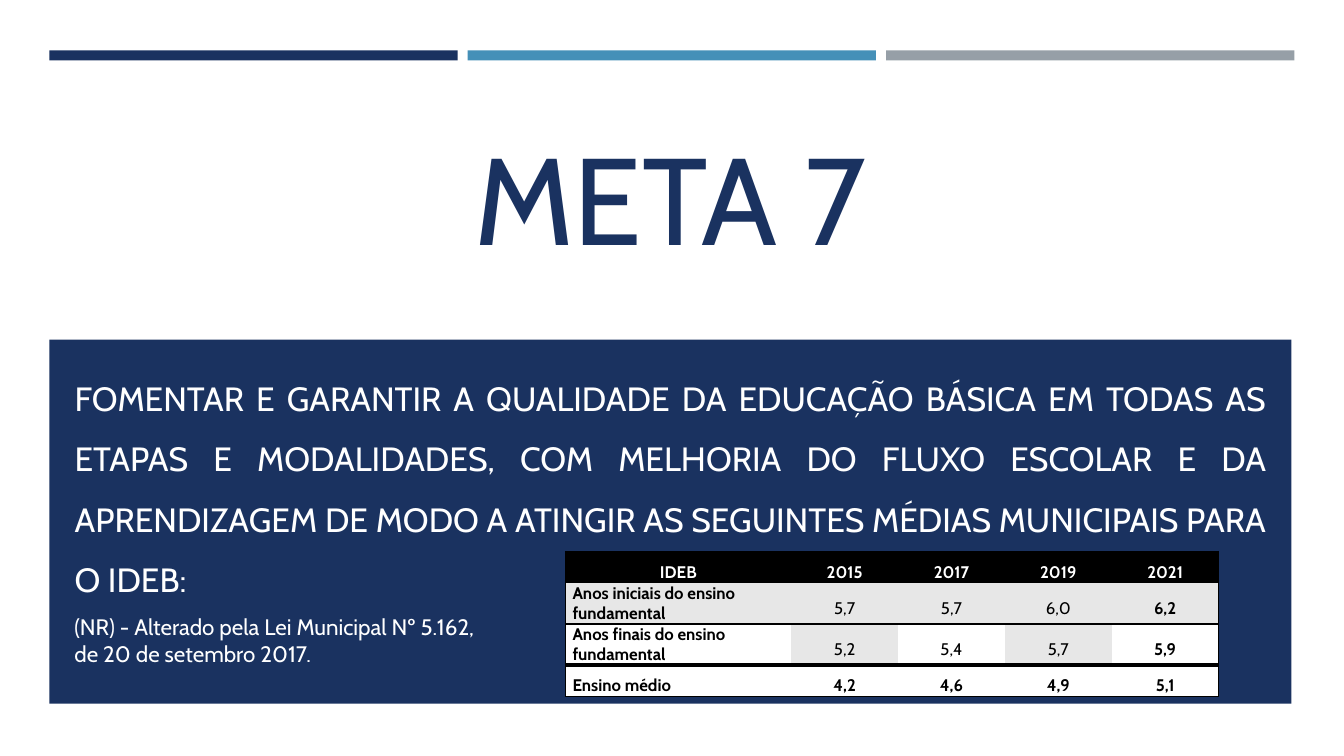
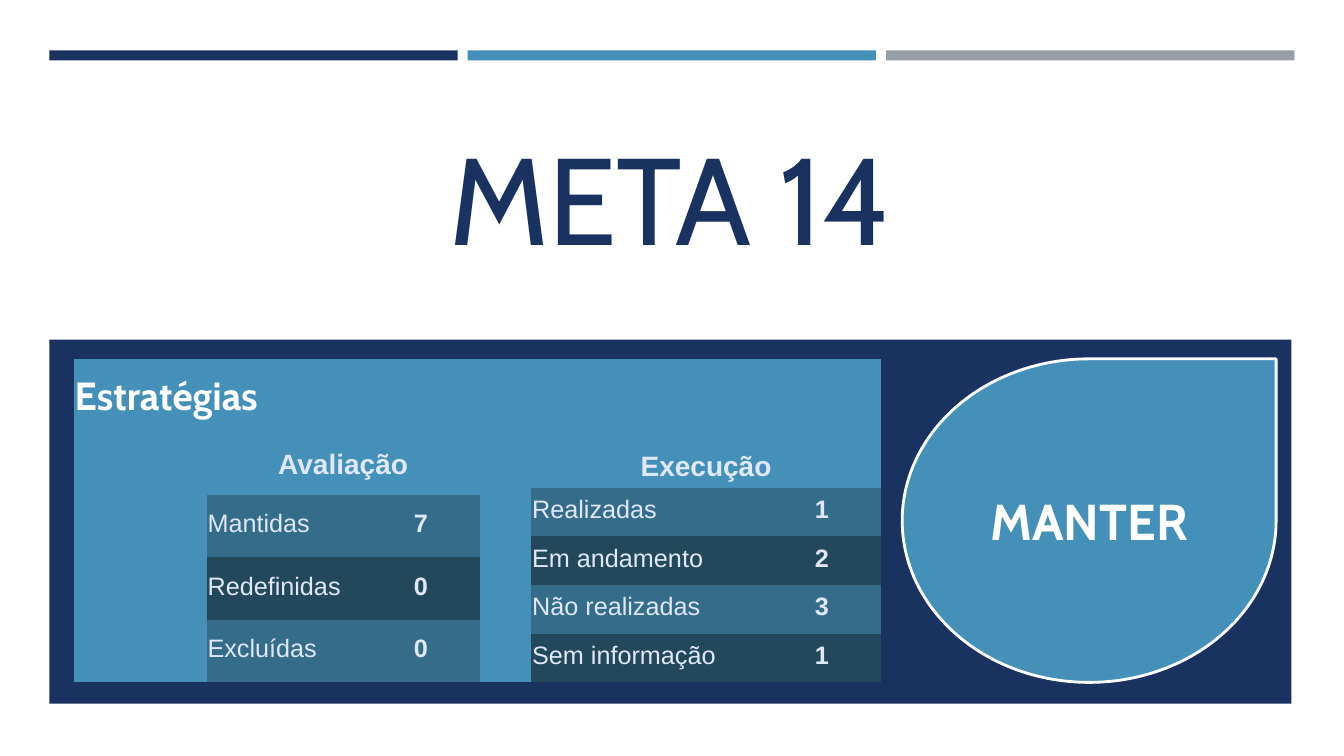
from lxml.etree import SubElement
from pptx import Presentation
from pptx.dml.color import RGBColor
from pptx.enum.shapes import MSO_SHAPE as Shape
from pptx.enum.text import MSO_ANCHOR as Anchor, MSO_AUTO_SIZE as AutoSize, PP_ALIGN as Align
from pptx.oxml.ns import qn
from pptx.util import Inches, Pt

NAVY = RGBColor(0x1A, 0x32, 0x60)
BLUE = RGBColor(0x45, 0x90, 0xB8)
GRAY = RGBColor(0x96, 0x9F, 0xA7)
STEEL = RGBColor(0x34, 0x6C, 0x8A)
TEAL = RGBColor(0x23, 0x48, 0x5C)
ICE = RGBColor(0xE0, 0xE8, 0xF7)
SILVER = RGBColor(0xE7, 0xE7, 0xE7)
WHITE = RGBColor(0xFF, 0xFF, 0xFF)
BLACK = RGBColor(0, 0, 0)

CELL = Inches(0.1)
COLUMNS, ROWS = 133.33, 75
MARGIN, TEXT_LEFT, TEXT_WIDTH = 4.9, 6.4, 120.2
PANEL_TOP, PANEL_WIDTH, PANEL_HEIGHT = 33.7, 123.2, 36.1
BAND_WIDTH, BAND_GAP = 40.5, 1
SCORE_LEFT, SCORE_TOP = 7.3, 35.6
NO_STYLE = "{2D5ABB26-0587-4C30-8999-92F81FD0307C}"
FORECAST = [
    ("IDEB", "2015", "2017", "2019", "2021"),
    ("Anos iniciais do ensino fundamental", "5,7", "5,7", "6,0", "6,2"),
    ("Anos finais do ensino fundamental", "5,2", "5,4", "5,7", "5,9"),
    ("Ensino médio", "4,2", "4,6", "4,9", "5,1"),
]


def grid(*cells):
    return [int(CELL * cell) for cell in cells]


def place(shape, *cells):
    shape.left, shape.top, shape.width, shape.height = grid(*cells)


def write_text(frame, text, size, color=WHITE, font="Cabin", bold=False,
               align=Align.LEFT, spacing=None, after=None):
    para = frame.paragraphs[0]
    para.text = text
    para.alignment = align
    if spacing is not None:
        para.line_spacing = spacing
    if after is not None:
        para.space_after = Pt(after)
    for span in para.runs:
        span.font.name = font
        span.font.size = Pt(size)
        span.font.bold = bold
        span.font.color.rgb = color


def add_block(page, kind, cells, fill, line=None):
    block = page.shapes.add_shape(kind, *grid(*cells))
    block.shadow.inherit = False
    block.fill.solid()
    block.fill.fore_color.rgb = fill
    if line is None:
        block.line.fill.background()
    else:
        block.line.color.rgb = line
        block.line.width = Pt(2)
    return block


def set_up_layout(layout, page):
    title, subtitle = list(layout.placeholders)[:2]
    place(title, TEXT_LEFT, 11.2, TEXT_WIDTH, 16.1)
    place(subtitle, TEXT_LEFT, 34.6, TEXT_WIDTH, 25.7)
    blocks = [((MARGIN + i * (BAND_WIDTH + BAND_GAP), 5, BAND_WIDTH, 1), color)
              for i, color in enumerate((NAVY, BLUE, GRAY))]
    blocks.append(((MARGIN, PANEL_TOP, PANEL_WIDTH, PANEL_HEIGHT), NAVY))
    for i, (cells, color) in enumerate(blocks):
        element = add_block(page, Shape.RECTANGLE, cells, color).element
        element.xpath(".//p:cNvPr")[0].set("id", str(20 + i))
        layout.shapes.element.insert(2 + i, element)


def write_title(page, text):
    frame = page.shapes.title.text_frame
    frame.auto_size = AutoSize.NONE
    frame.vertical_anchor = Anchor.BOTTOM
    write_text(frame, text, 88, color=NAVY, align=Align.CENTER)


def write_goal(page, text):
    frame = page.placeholders[1].text_frame
    frame.auto_size = AutoSize.NONE
    frame.vertical_anchor = Anchor.MIDDLE
    write_text(frame, text, 24, align=Align.JUSTIFY, spacing=1.5, after=6)


def add_note(page, text):
    box = page.shapes.add_textbox(*grid(TEXT_LEFT, 60.3, 48, 9.1))
    box.text_frame.word_wrap = True
    write_text(box.text_frame, text, 16)


def add_grid_table(page, left, top, widths, heights):
    holder = page.shapes.add_table(len(heights), len(widths),
                                   *grid(left, top, sum(widths), sum(heights)))
    next(holder.element.iter(qn("a:tableStyleId"))).text = NO_STYLE
    table = holder.table
    for column, width in zip(table.columns, grid(*widths)):
        column.width = width
    for row, height in zip(table.rows, grid(*heights)):
        row.height = height
    return holder


def paint_cell(cell, fill, insets, anchor=Anchor.MIDDLE):
    cell.fill.solid()
    cell.fill.fore_color.rgb = fill
    cell.margin_left, cell.margin_top, cell.margin_right, cell.margin_bottom = grid(*insets)
    cell.vertical_anchor = anchor


def add_borders(properties, widths):
    for i, (side, width) in enumerate(widths.items()):
        line = SubElement(properties, qn(f"a:ln{side}"), w=str(Pt(width)))
        fill = SubElement(line, qn("a:solidFill"))
        SubElement(fill, qn("a:srgbClr"), val=str(BLACK))
        properties.insert(i, line)


def forecast_fill(row, column):
    if row == 0:
        return BLACK
    return SILVER if row == 1 or (row == 2 and column in (1, 3)) else WHITE


def add_forecast_table(page):
    holder = add_grid_table(page, 56.1, 54.7, [22.4] + [10.6] * 4, [3.1, 4.1, 4, 3.1])
    last_row, last_column = len(FORECAST) - 1, len(FORECAST[0]) - 1
    for r, values in enumerate(FORECAST):
        for c, value in enumerate(values):
            cell = holder.table.cell(r, c)
            paint_cell(cell, forecast_fill(r, c), (0.7, 0, 0.7, 0))
            write_text(cell.text_frame, value, 12,
                       color=BLACK if r else WHITE,
                       bold=r in (0, last_row) or c in (0, last_column),
                       align=Align.LEFT if r and c == 0 else Align.CENTER,
                       spacing=1 if c == 0 and r in (1, 2) else 1.5)
    for i, properties in enumerate(holder.element.iter(qn("a:tcPr"))):
        r, c = divmod(i, last_column + 1)
        widths = {"L": 1} if c == 0 else {"R": 1} if c == last_column else {}
        widths["T"] = 4 if r == last_row else 1
        widths["B"] = 4 if r == last_row - 1 else 1
        add_borders(properties, widths)


def add_score_table(page, left, widths, heights, heading, scores, title="", anchor=Anchor.MIDDLE):
    table = add_grid_table(page, left, SCORE_TOP, widths, heights).table
    value_column = len(widths) - 1
    label_column = value_column - 1
    for r in range(len(heights)):
        for c in range(len(widths)):
            score_fill = STEEL if r % 2 == 0 else TEAL
            fill = score_fill if r > 1 and c >= label_column else BLUE
            paint_cell(table.cell(r, c), fill, (0.1, 0.1, 0.1, 0.5))
    table.cell(0, 0).merge(table.cell(0, label_column))
    table.cell(1, label_column).merge(table.cell(1, value_column))
    if title:
        write_text(table.cell(0, 0).text_frame, title, 28, bold=True)
    head = table.cell(1, label_column)
    head.vertical_anchor = anchor
    write_text(head.text_frame, heading, 20, color=ICE, font="Arial", bold=True, align=Align.CENTER)
    for r, (label, value) in enumerate(scores, 2):
        write_text(table.cell(r, label_column).text_frame, label, 18, color=ICE, font="Arial")
        write_text(table.cell(r, value_column).text_frame, value, 18, color=ICE, font="Arial",
                   bold=True, align=Align.CENTER)


def add_verdict(page, text):
    drop = add_block(page, Shape.TEAR, (89.5, SCORE_TOP, 37.1, 32.1), BLUE, line=WHITE)
    drop.text_frame.vertical_anchor = Anchor.MIDDLE
    write_text(drop.text_frame, text, 36, bold=True, align=Align.CENTER)


def build_goal_page(page):
    write_title(page, "META 7")
    write_goal(page, "FOMENTAR E GARANTIR A QUALIDADE DA EDUCAÇÃO BÁSICA EM TODAS AS ETAPAS E "
                     "MODALIDADES, COM MELHORIA DO FLUXO ESCOLAR E DA APRENDIZAGEM DE MODO A "
                     "ATINGIR AS SEGUINTES MÉDIAS MUNICIPAIS PARA O IDEB:")
    add_forecast_table(page)
    add_note(page, "(NR) - Alterado pela Lei Municipal Nº 5.162, \vde 20 de setembro 2017.")


def build_strategy_page(page):
    write_title(page, "META 14")
    subtitle = page.placeholders[1].element
    subtitle.getparent().remove(subtitle)
    review_widths = [4.4, 8.8, 15.4, 11.7]
    add_score_table(page, SCORE_LEFT, review_widths, [7.9, 5.6] + [6.2] * 3, "Avaliação",
                    [("Mantidas", "7"), ("Redefinidas", "0"), ("Excluídas", "0")],
                    title="Estratégias")
    add_score_table(page, SCORE_LEFT + sum(review_widths), [5.1, 23, 11.7],
                    [8.4, 4.4] + [4.82] * 4, "Execução",
                    [("Realizadas", "1"), ("Em andamento", "2"),
                     ("Não realizadas", "3"), ("Sem informação", "1")],
                    anchor=Anchor.BOTTOM)
    add_verdict(page, "MANTER")


def main():
    deck = Presentation()
    deck.slide_width, deck.slide_height = grid(COLUMNS, ROWS)
    layout = deck.slide_layouts[0]
    pages = [deck.slides.add_slide(layout) for _ in range(2)]
    set_up_layout(layout, pages[0])
    build_goal_page(pages[0])
    build_strategy_page(pages[1])
    deck.save("out.pptx")


if __name__ == "__main__":
    main()
